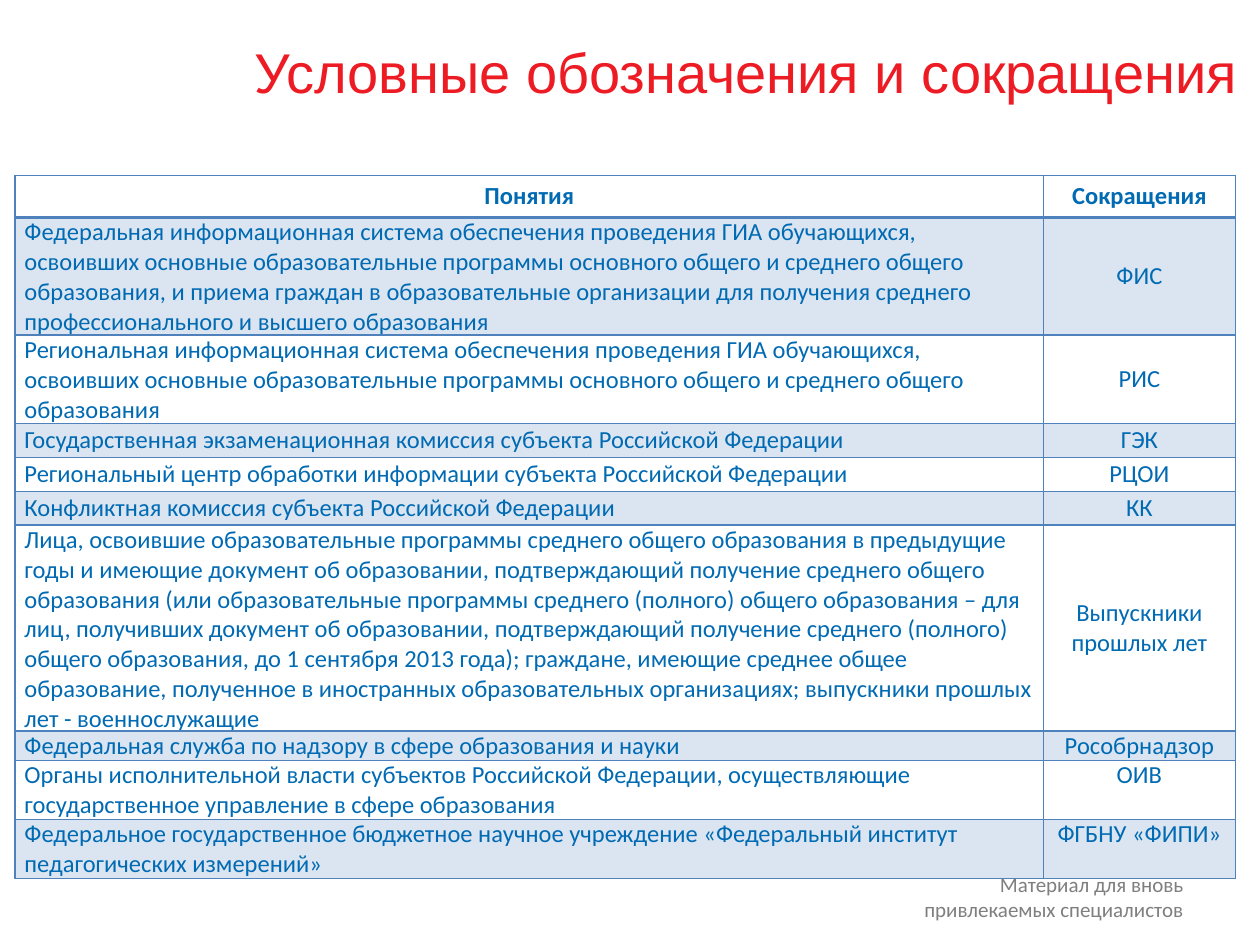
from pptx import Presentation
from pptx.util import Pt
from pptx.dml.color import RGBColor
from pptx.enum.text import PP_ALIGN as Align, MSO_ANCHOR as Anchor, MSO_AUTO_SIZE as Auto
from pptx.oxml.ns import qn
from lxml.etree import SubElement as Sub

RED = RGBColor(0xED, 0x1C, 0x24)
BLUE = RGBColor(0x00, 0x6A, 0xB3)
STEEL = RGBColor(0x4F, 0x81, 0xBD)
GRAY = RGBColor(0x7F, 0x7F, 0x7F)


def write(frame, text, size=14, color=BLUE, font="Calibri", bold=False,
          align=Align.LEFT, after=0):
    para = frame.paragraphs[0]
    para.alignment = align
    para.space_after = Pt(after)
    run = para.add_run()
    run.text = text
    run.font.size = Pt(size)
    run.font.name = font
    run.font.bold = bold
    run.font.color.rgb = color


def border(cell, top, bottom):
    props = cell._tc.get_or_add_tcPr()
    for side, width in (("L", 1), ("R", 1), ("T", top), ("B", bottom)):
        line = Sub(props, qn(f"a:ln{side}"), w=str(Pt(width)))
        Sub(Sub(line, qn("a:solidFill")), qn("a:srgbClr"), val=str(STEEL))


prs = Presentation()
prs.slide_width, prs.slide_height = Pt(720), Pt(540)
slide = prs.slides.add_slide(prs.slide_layouts[5])

# Title
title = slide.shapes.title
title.left, title.top, title.width, title.height = Pt(136), Pt(-1.5), Pt(581), Pt(84)
title.text_frame.auto_size = Auto.NONE
title.text_frame.vertical_anchor = Anchor.MIDDLE
write(title.text_frame, "Условные обозначения и сокращения", size=32, color=RED,
      font="Arial", align=Align.CENTER)

# Footer note, behind the table
note = slide.shapes.add_textbox(Pt(502), Pt(494.6), Pt(181.4), Pt(36.7)).text_frame
note.word_wrap = True
write(note, "Материал для вновь привлекаемых специалистов", size=12, color=GRAY,
      align=Align.RIGHT)

# Table: term, short form, row height, anchor
MID, TOP = Anchor.MIDDLE, Anchor.TOP
rows = [
    ("Понятия", "Сокращения", 24, MID),
    ("Федеральная информационная система обеспечения проведения ГИА обучающихся, "
     "освоивших основные образовательные программы основного общего и среднего общего "
     "образования, и приема граждан в образовательные организации для получения среднего "
     "профессионального и высшего образования", "ФИС", 67.2, MID),
    ("Региональная информационная система обеспечения проведения ГИА обучающихся, "
     "освоивших основные образовательные программы основного общего и среднего общего "
     "образования", "РИС", 50.4, MID),
    ("Государственная экзаменационная комиссия субъекта Российской Федерации",
     "ГЭК", 19.4, MID),
    ("Региональный центр обработки информации субъекта Российской Федерации",
     "РЦОИ", 19.4, MID),
    ("Конфликтная комиссия субъекта Российской Федерации", "КК", 19.4, MID),
    ("Лица, освоившие образовательные программы среднего общего образования в предыдущие "
     "годы и имеющие документ об образовании, подтверждающий получение среднего общего "
     "образования (или образовательные программы среднего (полного) общего образования – для "
     "лиц, получивших документ об образовании, подтверждающий получение среднего (полного) "
     "общего образования, до 1 сентября 2013 года); граждане, имеющие среднее общее "
     "образование, полученное в иностранных образовательных организациях; выпускники прошлых "
     "лет - военнослужащие", "Выпускники прошлых лет", 117.6, MID),
    ("Федеральная служба по надзору в сфере образования и науки", "Рособрнадзор", 16.8, TOP),
    ("Органы исполнительной власти субъектов Российской Федерации, осуществляющие "
     "государственное управление в сфере образования", "ОИВ", 33.6, TOP),
    ("Федеральное государственное бюджетное научное учреждение «Федеральный институт "
     "педагогических измерений»", "ФГБНУ «ФИПИ»", 33.6, TOP),
]
high = sum(row[2] for row in rows)
table = slide.shapes.add_table(len(rows), 2, Pt(8.6), Pt(100.2), Pt(697.4), Pt(high)).table
table.columns[0].width, table.columns[1].width = Pt(587.7), Pt(109.7)

for r, (term, short, height, anchor) in enumerate(rows):
    head = r == 0
    table.rows[r].height = Pt(height)
    for c, text in enumerate((term, short)):
        cell = table.cell(r, c)
        cell.vertical_anchor = anchor
        cell.margin_left = cell.margin_right = Pt(7.2 if head else 5.4)
        cell.margin_top = cell.margin_bottom = Pt(3.6 if head else 0)
        border(cell, top=2 if r == 1 else 1, bottom=2 if head else 1)
        # Odd rows carry a light tint
        if r % 2:
            cell.fill.solid()
            cell.fill.fore_color.rgb = STEEL
            tint = cell._tc.tcPr.find(qn("a:solidFill")).find(qn("a:srgbClr"))
            Sub(tint, qn("a:alpha"), val="20000")
        else:
            cell.fill.background()
        write(cell.text_frame, text, bold=head, after=1 if head else 10 if r > 2 else 0,
              align=Align.CENTER if head or c else Align.LEFT)

prs.save("out.pptx")
